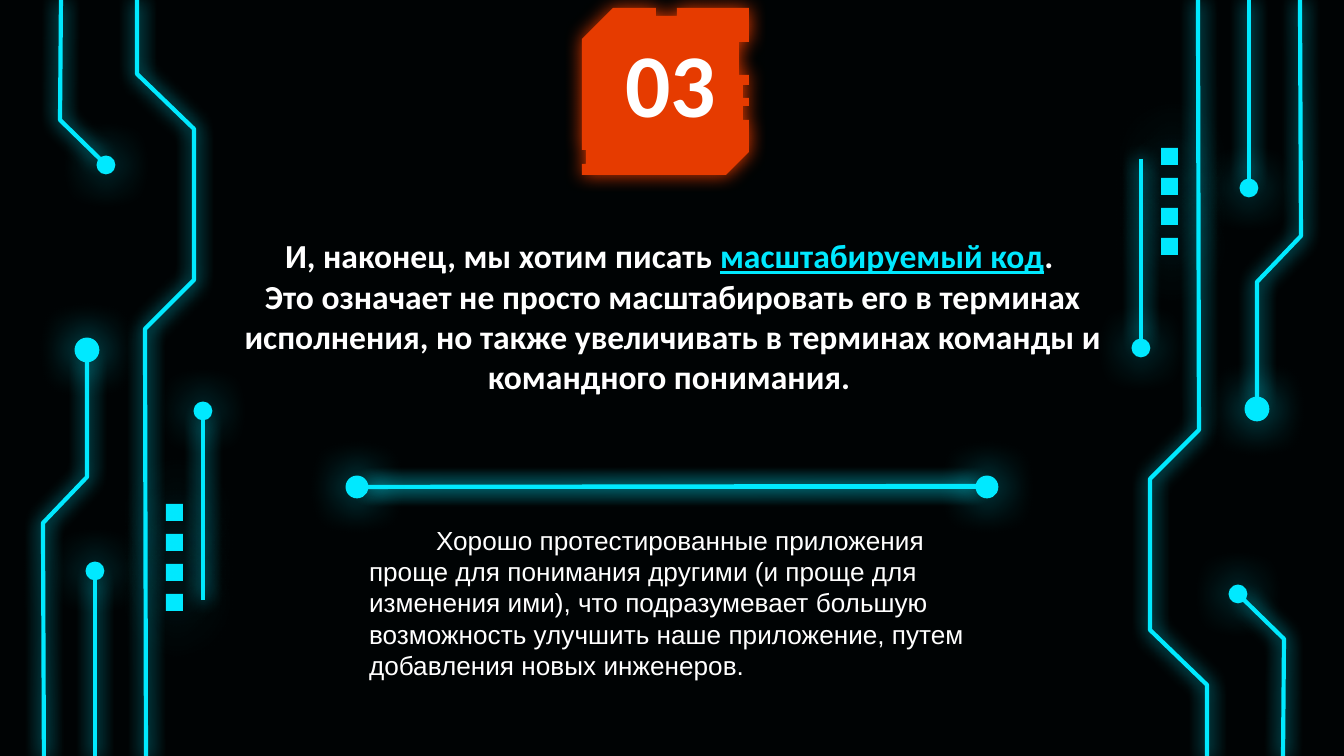
from lxml.etree import SubElement
from pptx import Presentation
from pptx.dml.color import RGBColor
from pptx.enum.shapes import MSO_CONNECTOR as Connector, MSO_SHAPE as Shape
from pptx.enum.text import MSO_ANCHOR as Anchor, PP_ALIGN as Align
from pptx.oxml.ns import qn
from pptx.util import Emu, Pt

BLACK = RGBColor(0x00, 0x03, 0x04)
CYAN = RGBColor(0x00, 0xE9, 0xFF)
ORANGE = RGBColor(0xE6, 0x3B, 0x00)
WHITE = RGBColor(0xFF, 0xFF, 0xFF)

PX_PER_INCH = 134.4
INSET = 13

# Circuit artwork, relative to a 240 x 759 box
TRACES = [
    [(146, 759), (145, 329), (194, 280), (194, 129), (137, 74), (137, 0)],
    [(95, 759), (95, 577)],
    [(61, 0), (60, 120), (101, 160)],
    [(44, 759), (43, 523), (87, 477), (87, 357)],
    [(203, 600), (203, 417)],
]
PADS = [(87, 350, 22), (106, 165, 16), (203, 411, 16), (95, 571, 16)]
CHIP_LEFT, CHIP_TOP, CHIP_SIZE, CHIP_STEP = 166, 504, 17, 30

# Notched badge outline, relative to a 167 x 167 box
BADGE = [
    (31, 0), (0, 31), (0, 142), (4, 142), (4, 156), (0, 156), (0, 167),
    (144, 167), (167, 144), (167, 112), (161, 112), (161, 98), (167, 98),
    (167, 90), (161, 90), (161, 77), (167, 77), (167, 67), (157, 67),
    (157, 34), (167, 34), (167, 0), (95, 0), (95, 8), (74, 8), (74, 0),
]


def px(length):
    return Emu(round(length * 914400 / PX_PER_INCH))


def add_glow(shape, color, blur, alpha=100, distance=0):
    """Add a coloured soft shadow; call after fill and line are set."""
    properties = shape._element.spPr
    effects = SubElement(properties, qn("a:effectLst"))
    shadow = SubElement(effects, qn("a:outerShdw"), blurRad=str(Pt(blur)),
                        dist=str(Pt(distance)), dir="0", algn="ctr", rotWithShape="0")
    tint = SubElement(shadow, qn("a:srgbClr"), val=str(color))
    SubElement(tint, qn("a:alpha"), val=str(alpha * 1000))


def set_line(shape, width):
    shape.line.color.rgb = CYAN
    shape.line.width = Pt(width)


def set_fill(shape, color):
    shape.fill.solid()
    shape.fill.fore_color.rgb = color


def add_outline(page, points, close):
    points = [(px(x), px(y)) for x, y in points]
    builder = page.shapes.build_freeform(*points[0])
    builder.add_line_segments(points[1:], close=close)
    return builder.convert_to_shape()


def add_pad(page, x, y, size):
    pad = page.shapes.add_shape(Shape.OVAL, px(x - size / 2), px(y - size / 2),
                                px(size), px(size))
    set_fill(pad, CYAN)
    set_line(pad, 1.5)
    add_glow(pad, CYAN, 22.5)


def add_text(page, box, anchor):
    frame = page.shapes.add_textbox(*map(px, box)).text_frame
    frame.word_wrap = True
    frame.vertical_anchor = anchor
    frame.margin_left = frame.margin_right = px(INSET)
    frame.margin_top = frame.margin_bottom = px(INSET)
    return frame


def set_font(para, name, size, bold=False):
    para.font.name = name
    para.font.size = Pt(size)
    para.font.bold = bold
    para.font.color.rgb = WHITE


def draw_circuit(page, box, turned=False):
    """Draw the circuit traces; turned rotates them by half a turn."""
    left, top, width, height = box

    def place(x, y):
        return (left + width - x, top + height - y) if turned else (left + x, top + y)

    for points in TRACES:
        trace = add_outline(page, [place(*point) for point in points], close=False)
        trace.fill.background()
        set_line(trace, 2.25)
        add_glow(trace, CYAN, 10.1)
    for x, y, size in PADS:
        add_pad(page, *place(x, y), size)
    for row in range(4):
        x, y = place(CHIP_LEFT + CHIP_SIZE / 2, CHIP_TOP + row * CHIP_STEP + CHIP_SIZE / 2)
        chip = page.shapes.add_shape(Shape.RECTANGLE, px(x - CHIP_SIZE / 2),
                                     px(y - CHIP_SIZE / 2), px(CHIP_SIZE), px(CHIP_SIZE))
        set_fill(chip, CYAN)
        chip.line.fill.background()
        add_glow(chip, CYAN, 36, alpha=70, distance=1.5)


def draw_badge(page, box, number):
    left, top, width, height = box
    badge = add_outline(page, [(left + x, top + y) for x, y in BADGE], close=True)
    set_fill(badge, ORANGE)
    badge.line.fill.background()
    add_glow(badge, ORANGE, 10.1)
    para = add_text(page, (left - 259, top + 13, 695, 121), Anchor.MIDDLE).paragraphs[0]
    para.text = number
    para.alignment = Align.CENTER
    set_font(para, "Calibri", 48, bold=True)


def draw_statement(page, box):
    frame = add_text(page, box, Anchor.MIDDLE)
    lead, detail = frame.paragraphs[0], frame.add_paragraph()
    for para in (lead, detail):
        para.alignment = Align.CENTER
        set_font(para, "Calibri", 18, bold=True)
    lead.add_run().text = "И, наконец, мы хотим писать "
    span = lead.add_run()
    span.text = "масштабируемый код"
    span.font.color.rgb = CYAN
    span.font.underline = True
    lead.add_run().text = ". "
    detail.add_run().text = ("Это означает не просто масштабировать его в терминах исполнения, "
                             "но также увеличивать в терминах команды и командного понимания. ")


def draw_divider(page, box):
    left, top, width, size = box
    middle = top + size / 2
    # Two nearly overlapping lines strengthen the glow
    for end_y in (middle - 1, middle):
        line = page.shapes.add_connector(Connector.STRAIGHT, px(left + size), px(middle),
                                         px(left + width - size), px(end_y))
        set_line(line, 2.25)
        add_glow(line, CYAN, 10.1)
    for x in (left + size / 2, left + width - size / 2):
        add_pad(page, x, middle, size)


def draw_body(page, box):
    para = add_text(page, box, Anchor.TOP).paragraphs[0]
    para.text = ("Хорошо протестированные приложения проще для понимания другими "
                 "(и проще для изменения ими), что подразумевает большую возможность "
                 "улучшить наше приложение, путем добавления новых инженеров.")
    para._p.get_or_add_pPr().set("indent", str(px(67)))
    set_font(para, "Arial", 14)


def main():
    deck = Presentation()
    deck.slide_width, deck.slide_height = px(1344), px(756)
    page = deck.slides.add_slide(deck.slide_layouts[6])
    page.background.fill.solid()
    page.background.fill.fore_color.rgb = BLACK

    draw_circuit(page, (0, 0, 240, 759))
    draw_circuit(page, (1104, 0, 240, 759), turned=True)
    draw_badge(page, (582, 8, 167, 167), "03")
    draw_statement(page, (226, 183, 894, 266))
    draw_divider(page, (347, 477, 650, 20))
    draw_body(page, (356, 511, 633, 218))
    deck.save("out.pptx")


if __name__ == "__main__":
    main()
